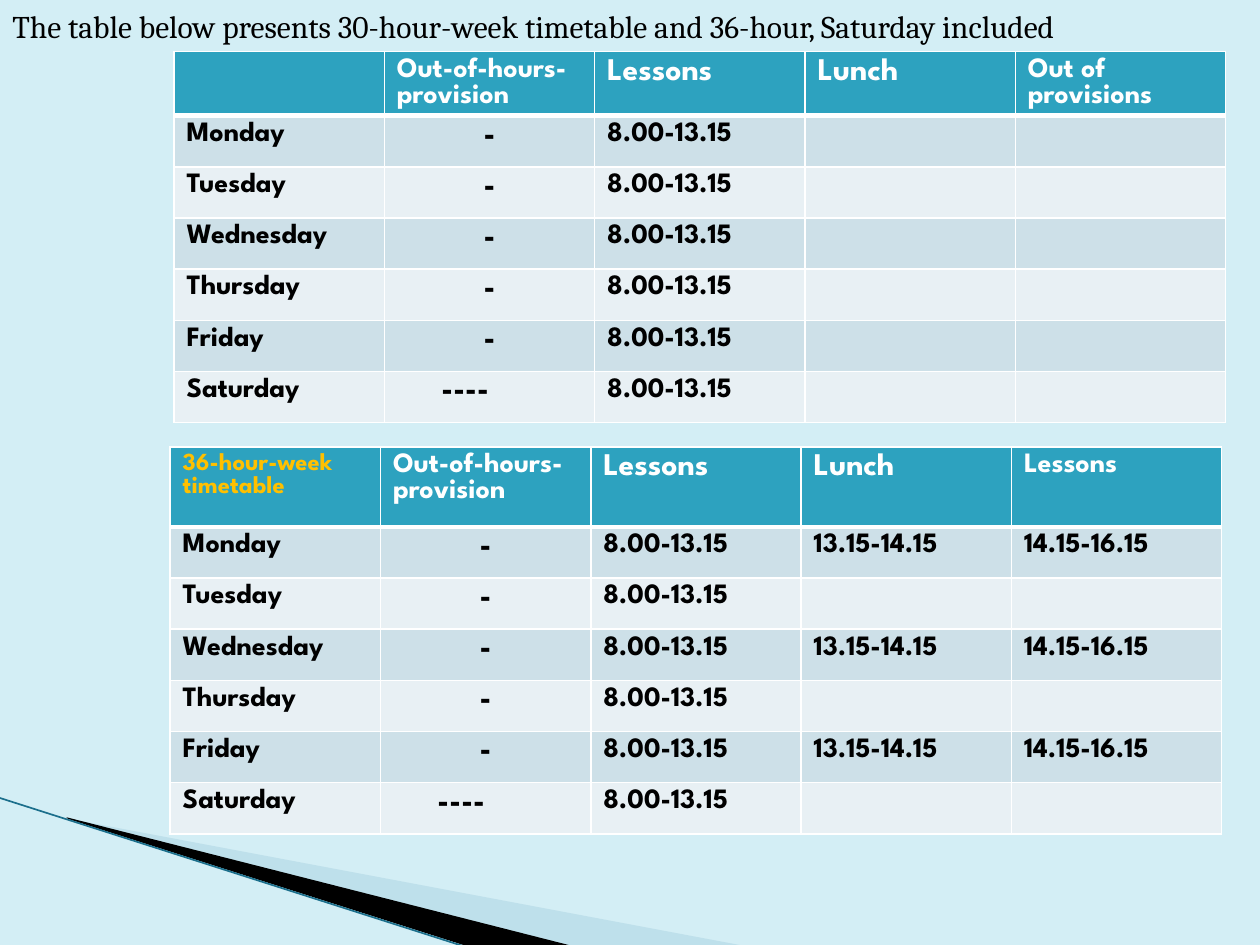
from lxml.etree import SubElement
from pptx import Presentation
from pptx.dml.color import RGBColor
from pptx.enum.shapes import MSO_CONNECTOR
from pptx.enum.text import PP_ALIGN
from pptx.oxml.ns import qn
from pptx.util import Pt

COLORS = {
    "background": "D3EEF5", "header": "2DA2BF", "odd": "CDE0E8", "even": "E8F0F4",
    "white": "FFFFFF", "black": "000000", "gold": "FFC000",
    "swoosh": "A0CBDC", "edge": "1B6F8C",
}
DAYS = ["Monday", "Tuesday", "Wednesday", "Thursday", "Friday", "Saturday"]
LONG_DAYS = ("Monday", "Wednesday", "Friday")
TABLE_FONT = "League Spartan"
COLUMN_WIDTH, ROW_HEIGHT = 120.2, 29.25
DASH_INDENT = 32.6


def color(name):
    return RGBColor.from_string(COLORS[name])


def add_swoosh(slide, points, fill, alpha=100):
    builder = slide.shapes.build_freeform(*points[0], scale=Pt(1))
    builder.add_line_segments(points[1:], close=True)
    shape = builder.convert_to_shape()
    shape.shadow.inherit = False
    shape.fill.solid()
    shape.fill.fore_color.rgb = color(fill)
    shape.line.fill.background()
    if alpha < 100:
        rgb = shape._element.spPr.find(qn("a:solidFill"))[0]
        SubElement(rgb, qn("a:alpha"), val=str(alpha * 1000))


def add_edge(slide, start, end):
    line = slide.shapes.add_connector(
        MSO_CONNECTOR.STRAIGHT, *(Pt(value) for value in start + end))
    line.line.color.rgb = color("edge")
    line.line.width = Pt(0.95)
    SubElement(line._element.spPr, qn("a:effectLst"))


def set_font(paragraph, name, size, font_color, bold=False):
    font = paragraph.font
    font.name, font.size, font.bold = name, Pt(size), bold
    font.color.rgb = color(font_color)


def add_title(slide, text):
    box = slide.shapes.add_textbox(Pt(0), Pt(0.7), Pt(720), Pt(29))
    box.text_frame.word_wrap = True
    paragraph = box.text_frame.paragraphs[0]
    paragraph.text = text
    set_font(paragraph, "Cambria", 18, "black")


def set_borders(cell, bottom, top):
    properties = cell._tc.get_or_add_tcPr()
    for side, width in (("L", 1), ("R", 1), ("T", top), ("B", bottom)):
        line = SubElement(properties, qn(f"a:ln{side}"), w=str(Pt(width)))
        fill = SubElement(line, qn("a:solidFill"))
        SubElement(fill, qn("a:srgbClr"), val=COLORS["white"])


def fill_cell(cell, text, size, font_color, fill, bottom=1, top=1):
    set_borders(cell, bottom, top)
    cell.fill.solid()
    cell.fill.fore_color.rgb = color(fill)
    if not text:
        return
    paragraph = cell.text_frame.paragraphs[0]
    paragraph.text = text
    if text == "-":
        paragraph.alignment = PP_ALIGN.CENTER
    elif text == "----":
        cell.margin_left = Pt(DASH_INDENT)
    set_font(paragraph, TABLE_FONT, size, font_color, bold=True)


def add_timetable(slide, left, top, header_height, headers, rows):
    """Headers are (text, size, color); rows are lists of cell texts."""
    height = header_height + ROW_HEIGHT * len(rows)
    table = slide.shapes.add_table(
        len(rows) + 1, len(headers), Pt(left), Pt(top),
        Pt(COLUMN_WIDTH * len(headers)), Pt(height)).table
    table.first_row = table.horz_banding = False
    for column in table.columns:
        column.width = Pt(COLUMN_WIDTH)
    for index, row in enumerate(table.rows):
        row.height = Pt(ROW_HEIGHT if index else header_height)

    for column, (text, size, font_color) in enumerate(headers):
        fill_cell(table.cell(0, column), text, size, font_color, "header", bottom=3)
    for index, row in enumerate(rows, start=1):
        for column, text in enumerate(row):
            fill_cell(table.cell(index, column), text,
                      18 if text.startswith("-") else 16, "black",
                      "odd" if index % 2 else "even", top=3 if index == 1 else 1)


def day_rows(long_days=()):
    return [
        [day, "----" if day == "Saturday" else "-", "8.00-13.15"]
        + (["13.15-14.15", "14.15-16.15"] if day in long_days else ["", ""])
        for day in DAYS
    ]


def main():
    presentation = Presentation()
    presentation.slide_width, presentation.slide_height = Pt(720), Pt(540)
    slide = presentation.slides.add_slide(presentation.slide_layouts[6])
    slide.background.fill.solid()
    slide.background.fill.fore_color.rgb = color("background")

    # Corner decoration
    add_swoosh(slide, [(39.6, 468.5), (428.4, 540.7), (328.3, 540.7), (39.6, 468)],
               "swoosh", alpha=40)
    add_swoosh(slide, [(38.2, 467.3), (329, 540.7), (267.8, 541.4), (38.9, 468)], "black")
    add_edge(slide, (-0.7, 455.8), (267.1, 541.4))

    # 30-hour timetable
    shared = [("Out-of-hours-provision", 16, "white"),
              ("Lessons", 18, "white"), ("Lunch", 18, "white")]
    add_timetable(slide, 99.4, 29.5, 36.6,
                  [("", 16, "white"), *shared, ("Out of provisions", 16, "white")],
                  day_rows())

    add_title(slide, "The table below presents 30-hour-week timetable and 36-hour, "
                     "Saturday included")

    # 36-hour timetable
    add_timetable(slide, 97.2, 255.5, 45.4,
                  [("36-hour-week timetable", 14, "gold"), *shared,
                   ("Lessons", 16, "white")],
                  day_rows(LONG_DAYS))

    presentation.save("out.pptx")


if __name__ == "__main__":
    main()
